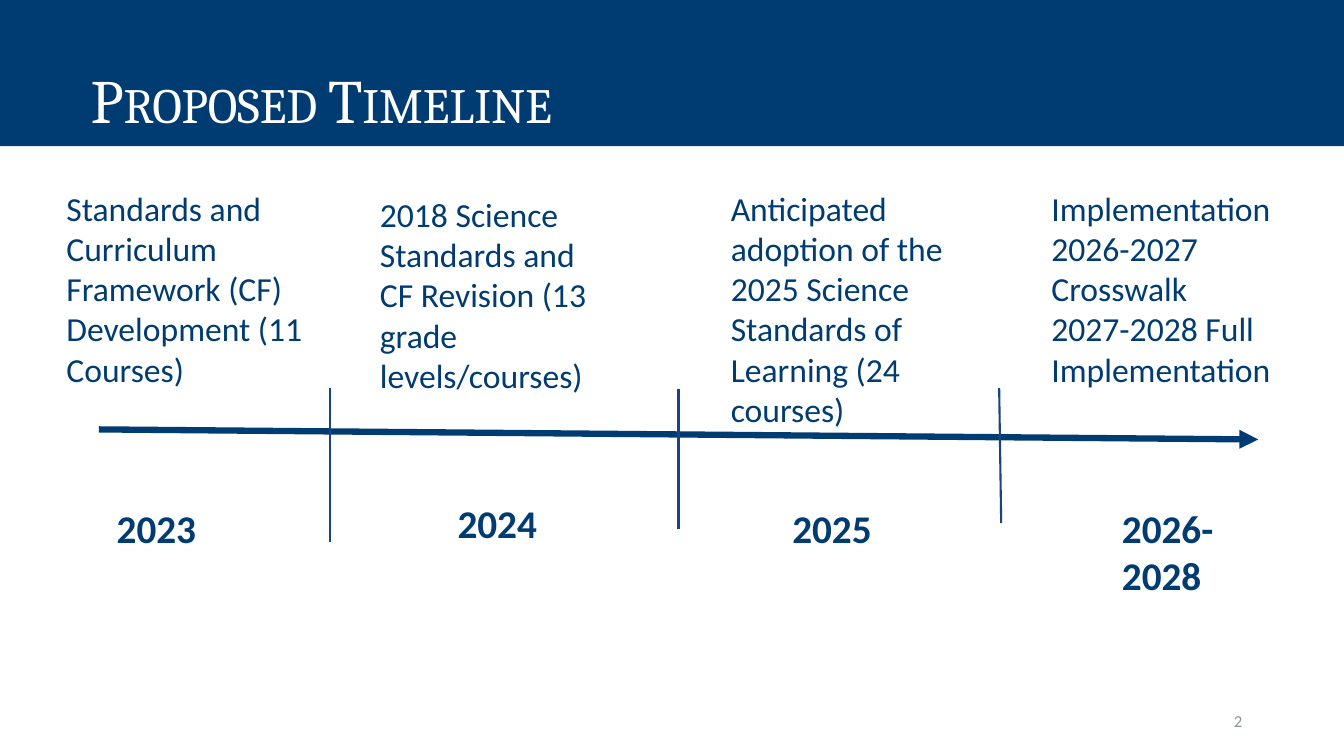
import pptx
import pptx.util
import pptx.dml.color
import pptx.enum.shapes
import pptx.enum.text
import pptx.oxml.ns
import lxml.etree

COLORS = {"navy": "003C71", "divider": "1A4480", "white": "FFFFFF", "gray": "8C92A5"}

MILESTONES = [
    ("2023", (1.06, 4.95, 1.46, 0.57), (0.56, 1.81, 2.72, 2.12),
     ["Standards and Curriculum Framework (CF)  Development (11 Courses)"]),
    ("2024", (4.44, 4.9, 1.46, 0.57), (3.67, 1.87, 2.46, 2.12),
     ["2018 Science Standards and CF Revision (13 grade levels/courses)"]),
    ("2025", (7.76, 4.95, 1.46, 0.57), (7.15, 1.81, 2.46, 2.52),
     ["Anticipated adoption of the 2025 Science Standards of Learning (24 courses)"]),
    ("2026-2028", (11.03, 4.95, 1.46, 1.04), (10.33, 1.81, 2.74, 2.42),
     ["Implementation", "2026-2027 Crosswalk", "2027-2028 Full Implementation"]),
]

DIVIDERS = [
    ((3.27, 3.85), (3.27, 5.38)),
    ((6.73, 3.86), (6.73, 5.25)),
    ((9.91, 3.85), (9.93, 5.19)),
]


class TimelineSlide:
    body_font = "Calibri"
    title_font = "Cambria"

    def __init__(self, deck):
        self.page = deck.slides.add_slide(deck.slide_layouts[6])

    def color(self, name):
        return pptx.dml.color.RGBColor.from_string(COLORS[name])

    def inches(self, lengths):
        return [pptx.util.Inches(length) for length in lengths]

    def add_span(self, para, text, size, color, font, bold=False):
        span = para.add_run()
        span.text = text
        span.font.name = font
        span.font.size = pptx.util.Pt(size)
        span.font.bold = bold
        span.font.color.rgb = self.color(color)
        return span

    def banner(self, text, place):
        box = self.page.shapes.add_shape(
            pptx.enum.shapes.MSO_SHAPE.RECTANGLE, *self.inches(place))
        box.shadow.inherit = False
        box.fill.solid()
        box.fill.fore_color.rgb = self.color("navy")
        box.line.fill.background()
        frame = box.text_frame
        frame.word_wrap = True
        frame.vertical_anchor = pptx.enum.text.MSO_ANCHOR.TOP
        frame.margin_left, frame.margin_top = self.inches((0.9, 0.7))
        para = frame.paragraphs[0]
        para.alignment = pptx.enum.text.PP_ALIGN.LEFT
        para.line_spacing = 0.9
        para.space_before = pptx.util.Pt(10)
        span = self.add_span(para, text, 44, "white", self.title_font)
        span._r.get_or_add_rPr().set("cap", "small")

    def text(self, lines, place, size, color="navy", bold=False):
        box = self.page.shapes.add_textbox(*self.inches(place))
        frame = box.text_frame
        frame.word_wrap = True
        for index, line in enumerate(lines):
            para = frame.add_paragraph() if index else frame.paragraphs[0]
            self.add_span(para, line, size, color, self.body_font, bold)
        return frame

    def page_number(self, number, place):
        frame = self.text([number], place, 12, "gray")
        frame.vertical_anchor = pptx.enum.text.MSO_ANCHOR.MIDDLE
        frame.paragraphs[0].alignment = pptx.enum.text.PP_ALIGN.RIGHT

    def line(self, start, end, color, width, arrow=False):
        connector = self.page.shapes.add_connector(
            pptx.enum.shapes.MSO_CONNECTOR.STRAIGHT, *self.inches(start + end))
        connector.line.color.rgb = self.color(color)
        connector.line.width = pptx.util.Pt(width)
        properties = connector._element.spPr
        if arrow:
            outline = properties.find(pptx.oxml.ns.qn("a:ln"))
            tail = lxml.etree.SubElement(outline, pptx.oxml.ns.qn("a:tailEnd"))
            tail.set("type", "triangle")
        lxml.etree.SubElement(properties, pptx.oxml.ns.qn("a:effectLst"))


def main():
    deck = pptx.Presentation()
    deck.slide_width = pptx.util.Inches(13.33)
    deck.slide_height = pptx.util.Inches(7.5)
    slide = TimelineSlide(deck)
    slide.banner("Proposed Timeline", (0, 0, 13.33, 1.45))
    slide.page_number("2", (9.42, 6.95, 3, 0.4))
    slide.line((0.98, 4.26), (12.48, 4.36), "navy", 4.5, arrow=True)
    for year, year_place, detail_place, details in MILESTONES:
        slide.text([year], year_place, 28, bold=True)
        slide.text(details, detail_place, 24)
    for start, end in DIVIDERS:
        slide.line(start, end, "divider", 1.5)
    deck.save("out.pptx")


if __name__ == "__main__":
    main()
